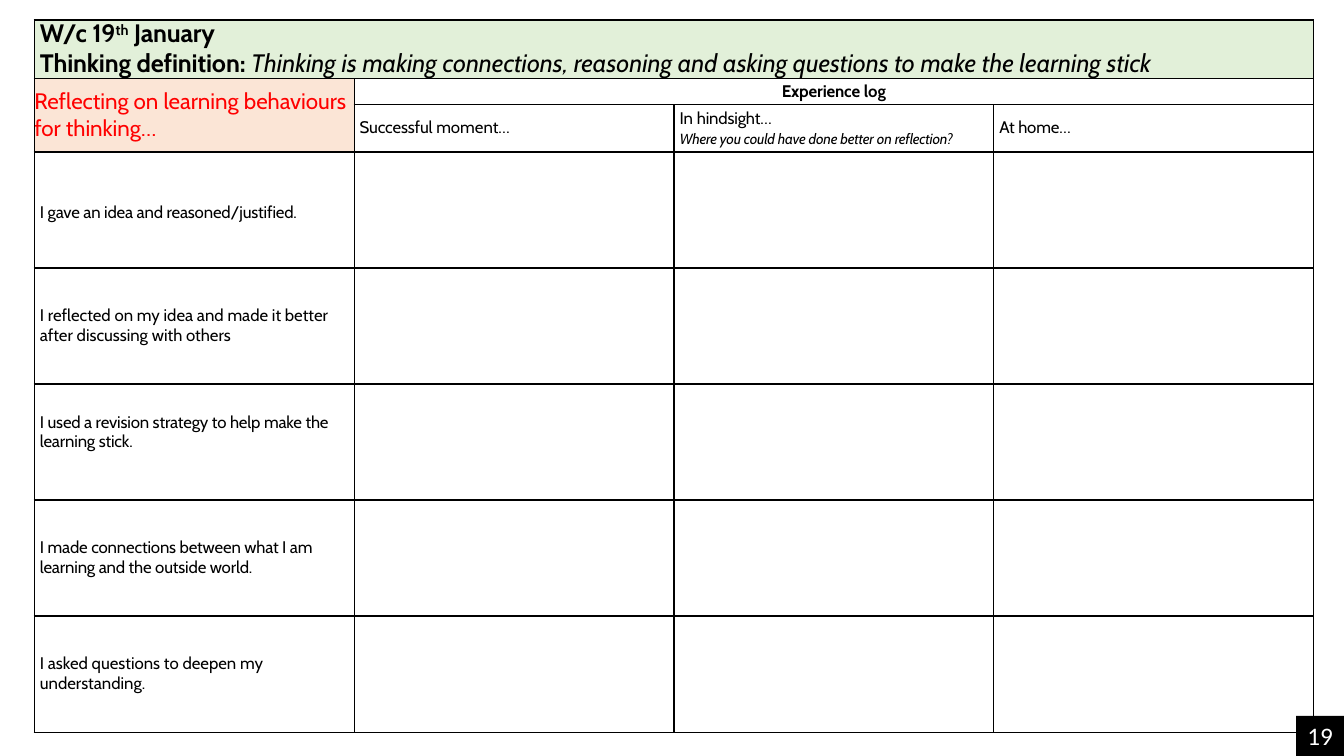
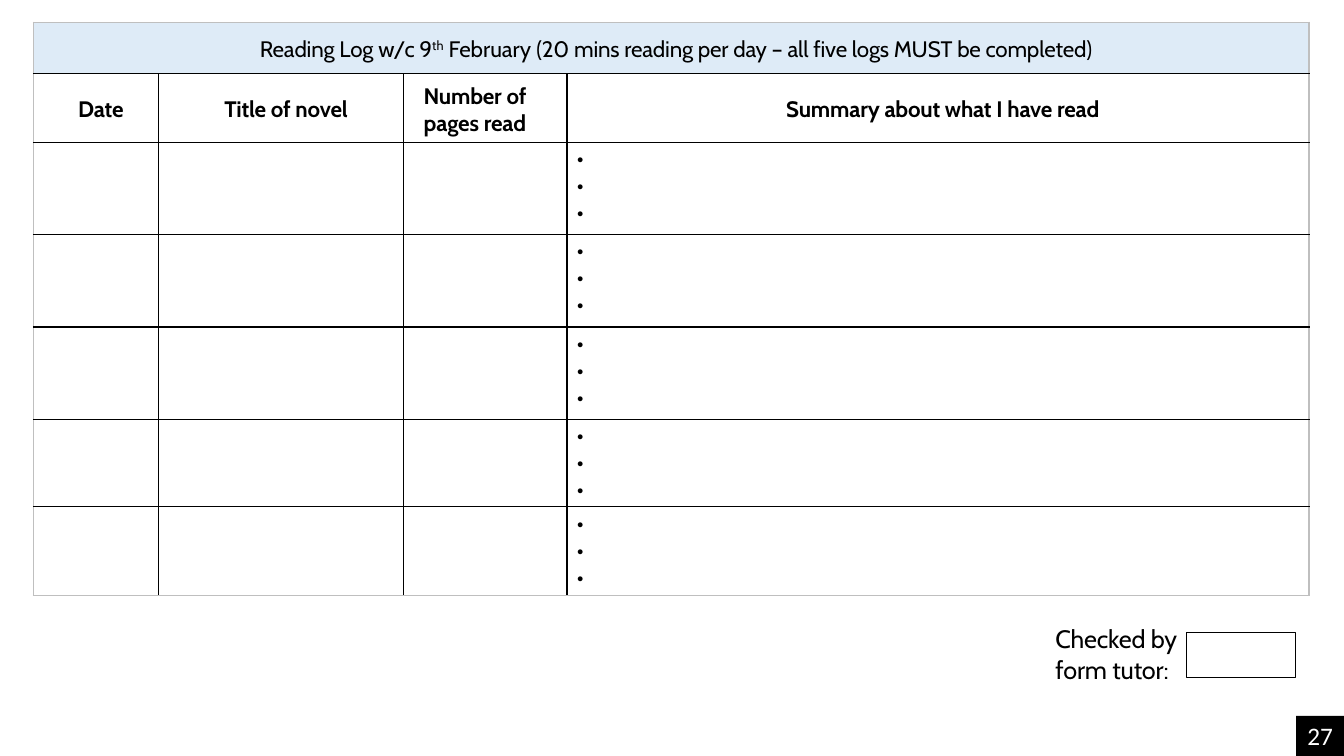
from lxml.etree import SubElement
from pptx import Presentation
from pptx.dml.color import RGBColor
from pptx.enum.shapes import MSO_SHAPE as Shape
from pptx.enum.text import MSO_ANCHOR as Anchor, PP_ALIGN as Align
from pptx.oxml.ns import qn
from pptx.util import Inches, Pt

BLACK, WHITE, RED, GREY = "000000", "FFFFFF", "FF0000", "BFBFBF"
GREEN, PEACH, BLUE = "E2F0D9", "FBE5D6", "DEEBF7"


def color(hex_text):
    return RGBColor.from_string(hex_text)


class Worksheet:
    """Holds the style and the current slide; lengths are percent of the slide's size."""

    font = "Cabin"
    number_font = "Calibri"
    line_width = 1

    def __init__(self, presentation):
        self.presentation = presentation
        self.slide = None

    def across(self, share):
        return round(self.presentation.slide_width * share / 100)

    def down(self, share):
        return round(self.presentation.slide_height * share / 100)

    def place(self, left, top, width, height):
        return (self.across(left), self.down(top),
                self.across(width), self.down(height))

    def new_slide(self):
        blank = self.presentation.slide_layouts[6]
        self.slide = self.presentation.slides.add_slide(blank)
        self.slide.background.fill.solid()
        self.slide.background.fill.fore_color.rgb = color(WHITE)

    def add_text(self, frame, paragraphs, size, ink=BLACK, font=None,
                 align=Align.LEFT, indent=0, before=0, leading=None):
        """Add paragraphs of (text, marks) runs; marks: b bold, i italic,
        ^ raised, t tight, s small."""
        for index, runs in enumerate(paragraphs):
            paragraph = frame.add_paragraph() if index else frame.paragraphs[0]
            paragraph.alignment = align
            paragraph.space_before = Pt(0 if index else before)
            if leading:
                paragraph.line_spacing = Pt(leading)
            properties = paragraph._p.get_or_add_pPr()
            properties.set("marL", str(Pt(indent)))
            properties.set("indent", "0")
            for text, marks in runs:
                run = paragraph.add_run()
                run.text = text
                run.font.name = font or self.font
                run.font.size = Pt(10.5 if "s" in marks else size)
                run.font.color.rgb = color(ink)
                run.font.bold = "b" in marks
                run.font.italic = "i" in marks
                if "^" in marks:
                    run._r.get_or_add_rPr().set("baseline", "30000")
                if "t" in marks:
                    run._r.get_or_add_rPr().set("spc", "-10")

    def rectangle(self, at, fill=None, line=None):
        shape = self.slide.shapes.add_shape(Shape.RECTANGLE, *self.place(*at))
        shape.shadow.inherit = False
        if fill:
            shape.fill.solid()
            shape.fill.fore_color.rgb = color(fill)
        else:
            shape.fill.background()
        if line:
            shape.line.color.rgb = color(line)
            shape.line.width = Pt(self.line_width)
        else:
            shape.line.fill.background()
        return shape

    def label(self, at, text, size):
        frame = self.slide.shapes.add_textbox(*self.place(*at)).text_frame
        frame.word_wrap = True
        self.set_insets(frame)
        self.add_text(frame, [[(text, "t")]], size, indent=0.7, before=1)

    def page_number(self, number):
        frame = self.rectangle((96.45, 94.7, 3.55, 5.3), fill=BLACK).text_frame
        frame.vertical_anchor = Anchor.MIDDLE
        self.set_insets(frame)
        self.add_text(frame, [[(str(number), "")]], 18, ink=WHITE,
                      font=self.number_font, align=Align.CENTER)

    def set_insets(self, holder, top=0, right=0, bottom=0):
        holder.margin_left = 0
        holder.margin_top, holder.margin_right = Pt(top), Pt(right)
        holder.margin_bottom = Pt(bottom)

    def table(self, left, top, columns, rows, spans=(), frame_line=BLACK):
        """Add a ruled white table; spans are (row, column, last row, last column)."""
        at = self.place(left, top, sum(columns), sum(rows))
        table = self.slide.shapes.add_table(len(rows), len(columns), *at).table
        table.first_row = table.horz_banding = False
        for column, share in zip(table.columns, columns):
            column.width = self.across(share)
        for row, share in zip(table.rows, rows):
            row.height = self.down(share)
        for row, column, last_row, last_column in spans:
            table.cell(row, column).merge(table.cell(last_row, last_column))
        for row in range(len(rows)):
            for column in range(len(columns)):
                cell = table.cell(row, column)
                self.set_insets(cell)
                self.paint(cell, WHITE)
                last_column = column + cell.span_width == len(columns)
                last_row = row + cell.span_height == len(rows)
                edges = (column == 0, last_column, row == 0, last_row)
                self.rule(cell, [frame_line if edge else BLACK for edge in edges])
        return table

    def rule(self, cell, inks):
        """Draw the left, right, top and bottom borders of a cell."""
        properties = cell._tc.get_or_add_tcPr()
        for index, (side, ink) in enumerate(zip("LRTB", inks)):
            line = SubElement(properties, qn(f"a:ln{side}"),
                              w=str(Pt(self.line_width)))
            fill = SubElement(line, qn("a:solidFill"))
            SubElement(fill, qn("a:srgbClr"), val=ink)
            properties.insert(index, line)

    def paint(self, cell, fill):
        cell.fill.solid()
        cell.fill.fore_color.rgb = color(fill)

    def fill_cell(self, cell, paragraphs, size, fill=None, anchor=Anchor.MIDDLE,
                  insets=(0, 0, 0), **style):
        if fill:
            self.paint(cell, fill)
        cell.vertical_anchor = anchor
        self.set_insets(cell, *insets)
        self.add_text(cell.text_frame, paragraphs, size, **style)


def thinking_log(sheet):
    sheet.new_slide()
    table = sheet.table(2.55, 2.65, [23.8] * 4, [7.75, 3.45, 6.25] + [15.35] * 5,
                        spans=[(0, 0, 0, 3), (1, 0, 2, 0), (1, 1, 1, 3)])
    definition = ("Thinking is making connections, reasoning and asking questions "
                  "to make the learning stick")
    sheet.fill_cell(table.cell(0, 0), [
        [("W/c 19", "bt"), ("th", "b^t"), (" January", "bt")],
        [("Thinking definition: ", "bt"), (definition, "i")],
    ], 18, fill=GREEN, indent=4, leading=20.9)
    sheet.fill_cell(table.cell(1, 0),
                    [[("Reflecting on learning behaviours for thinking…", "")]],
                    16, fill=PEACH, ink=RED)
    sheet.fill_cell(table.cell(1, 1), [[("Experience ", "bt"), ("log", "b")]],
                    12, align=Align.CENTER)

    headings = [
        [[("Successful ", "t"), ("moment…", "")]],
        [[("In ", ""), ("hindsight…", "t")],
         [("Where you could have done better on reflection?", "ist")]],
        [[("At ", "t"), ("home…", "t")]],
    ]
    for column, heading in enumerate(headings, 1):
        sheet.fill_cell(table.cell(2, column), heading, 12, indent=4, leading=13.9)

    behaviours = [
        ("I gave an idea and reasoned/justified.", "t", 18.6, 0),
        ("I reflected on my idea and made it better after discussing with others",
         "", 14, 0),
        ("I used a revision strategy to help make the learning stick.", "t", 14, 14),
        ("I made connections between what I am learning and the outside world.",
         "t", 14, 0),
        ("I asked questions to deepen my understanding.", "", 14, 0),
    ]
    for row, (text, marks, leading, bottom) in enumerate(behaviours, 3):
        sheet.fill_cell(table.cell(row, 0), [[(text, marks)]], 12, indent=4,
                        leading=leading, insets=(0, 0, bottom))
    sheet.page_number(19)


def reading_log(sheet):
    sheet.new_slide()
    rows = [6.8, 9.05, 12.2, 12.25, 12.2, 11.6, 11.75]
    table = sheet.table(2.5, 2.95, [9.3, 18.25, 12.15, 55.2], rows,
                        spans=[(0, 0, 0, 3)], frame_line=GREY)
    sheet.fill_cell(table.cell(0, 0), [[
        ("Reading Log w/c 9", "t"), ("th", "^"), (" February ", ""),
        ("(20 mins reading per day – all five logs MUST be completed)", "t"),
    ]], 16, fill=BLUE, align=Align.CENTER, indent=7, before=2.3, insets=(2, 0, 0))

    headings = [("Date", 0), ("Title of novel", 0), ("Number of pages read", 22),
                ("Summary about what I have read", 0)]
    for column, (text, right) in enumerate(headings):
        sheet.fill_cell(table.cell(1, column), [[(text, "bt")]], 16,
                        align=Align.CENTER, indent=7, before=2.7,
                        insets=(3, right, 0))
    for row in range(2, len(rows)):
        sheet.fill_cell(table.cell(row, 3), [[("•", "")]] * 3, 16,
                        anchor=Anchor.TOP, indent=7, before=2.4, insets=(2, 0, 0))

    sheet.rectangle((88.3, 83.7, 8.1, 5.9), line=BLACK)
    sheet.label((78.45, 82.5, 11.7, 8.3), "Checked by form tutor:", 18)
    sheet.page_number(27)


def main():
    presentation = Presentation()
    presentation.slide_width, presentation.slide_height = Inches(13.33), Inches(7.5)
    sheet = Worksheet(presentation)
    thinking_log(sheet)
    reading_log(sheet)
    presentation.save("out.pptx")


if __name__ == "__main__":
    main()
